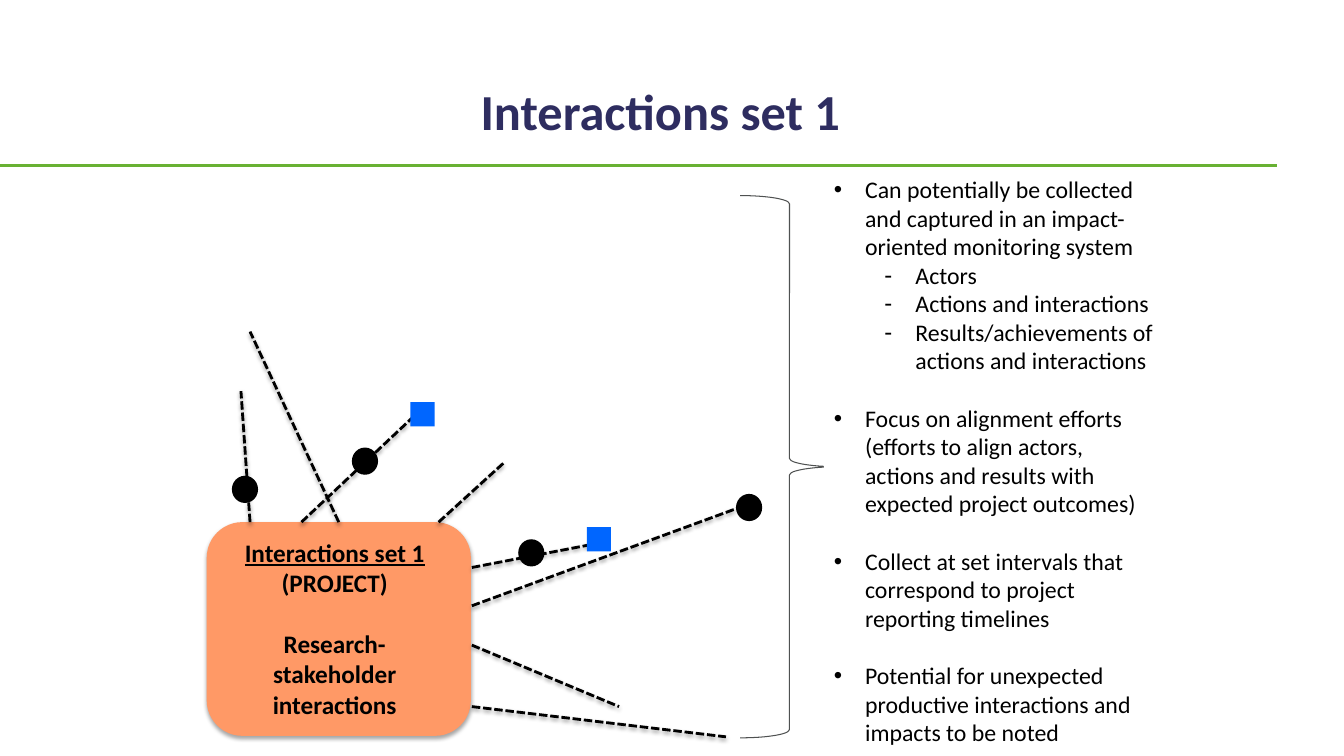
import pptx
import pptx.util
import pptx.dml.color
import pptx.enum.dml
import pptx.enum.shapes
import pptx.enum.text
import pptx.oxml.ns
import lxml.etree

Pt = pptx.util.Pt
Kind = pptx.enum.shapes.MSO_SHAPE
Straight = pptx.enum.shapes.MSO_CONNECTOR.STRAIGHT
Align = pptx.enum.text.PP_ALIGN
Anchor = pptx.enum.text.MSO_ANCHOR
Auto = pptx.enum.text.MSO_AUTO_SIZE
qn = pptx.oxml.ns.qn
hue = pptx.dml.color.RGBColor.from_string

deck = pptx.Presentation()
deck.slide_width = pptx.util.Inches(13.33)
deck.slide_height = pptx.util.Inches(7.5)
cell = deck.slide_height / 75
slide = deck.slides.add_slide(deck.slide_layouts[1])


def grid(*units):
    return [round(unit * cell) for unit in units]


def shade(shape, alpha=0, blur=0, drop=0):
    props = shape.element.spPr
    for old in props.findall(qn("a:effectLst")):
        props.remove(old)
    effects = lxml.etree.SubElement(props, qn("a:effectLst"))
    if alpha:
        outer = lxml.etree.SubElement(
            effects, qn("a:outerShdw"), blurRad=str(Pt(blur)), dist=str(Pt(drop)),
            dir="5400000", rotWithShape="0")
        tint = lxml.etree.SubElement(outer, qn("a:srgbClr"), val="000000")
        lxml.etree.SubElement(tint, qn("a:alpha"), val=str(alpha * 1000))


rule = slide.shapes.add_connector(Straight, *grid(0, 16.4, 126.7, 16.4))
rule.line.color.rgb = hue("68B133")
rule.line.width = Pt(2)
shade(rule)

title = slide.shapes.title
title.left, title.top, title.width, title.height = grid(20.5, 1.9, 90, 12.5)
title.text_frame.text = "Interactions set 1"
title.text_frame.vertical_anchor = Anchor.BOTTOM
head = title.text_frame.paragraphs[0]
head.alignment = Align.CENTER
head.font.name = "Calibri"
head.font.size = Pt(36)
head.font.bold = True
head.font.color.rgb = hue("2E2D60")

box = slide.shapes.add_shape(Kind.ROUNDED_RECTANGLE, *grid(20.5, 51.8, 26.2, 21.2))
box.fill.solid()
box.fill.fore_color.rgb = hue("FF9966")
box.line.fill.background()
shade(box, 35, 3.1, 1.8)

label = slide.shapes.add_textbox(*grid(21.2, 52.8, 24, 19.2)).text_frame
label.word_wrap = True
label.text = "Interactions set 1\n(PROJECT)\nResearch-stakeholder interactions"
for row, para in enumerate(label.paragraphs):
    para.alignment = Align.CENTER
    para.space_before = Pt(22 if row == 2 else 0)
    para.font.name = "Calibri"
    para.font.size = Pt(18)
    para.font.bold = True
    para.font.underline = row == 0
    para.font.color.rgb = hue("000000")

rays = [
    (29.9, 51.8, 41.9, 40.5), (33.6, 51.8, 24.8, 32.9),
    (46.8, 56.3, 59.3, 53.9), (46.8, 64, 61.4, 70.1),
    (46.8, 60.1, 75.1, 49.7), (43.5, 51.8, 50.1, 45.8),
    (46.8, 70.1, 72, 73.1), (24.8, 51.8, 23.9, 38.8),
]
for ray in rays:
    link = slide.shapes.add_connector(Straight, *grid(*ray))
    if ray[0] == 33.6:
        link.begin_connect(box, 0)
    link.line.color.rgb = hue("000000")
    link.line.width = Pt(2)
    link.line.dash_style = pptx.enum.dml.MSO_LINE.SQUARE_DOT
    shade(link, 38, 3.1, 1.6)

marks = [
    (Kind.OVAL, "000000", 2.6, 2.7, [(23, 47.2), (73, 49), (51.4, 53.5), (34.9, 44.4)]),
    (Kind.RECTANGLE, "0066FF", 2.4, 2.4, [(40.7, 39.9), (58.2, 52.3)]),
]
for kind, tone, wide, high, spots in marks:
    for left, top in spots:
        mark = slide.shapes.add_shape(kind, *grid(left, top, wide, high))
        mark.fill.solid()
        mark.fill.fore_color.rgb = hue(tone)
        mark.line.fill.background()
        mark.shadow.inherit = False

brace = slide.shapes.add_shape(Kind.RIGHT_BRACE, *grid(73.4, 19.4, 9.8, 53.8))
brace.fill.background()
brace.line.color.rgb = hue("4F5151")
brace.line.width = Pt(0.75)
brace.shadow.inherit = False

body = slide.placeholders[1]
body.left, body.top, body.width, body.height = grid(81.7, 16.6, 34, 58.2)
body.fill.solid()
body.fill.fore_color.rgb = hue("FFFFFF")
body.element.getparent().append(body.element)
frame = body.text_frame
frame.auto_size = Auto.NONE
frame.vertical_anchor = Anchor.MIDDLE
points = [
    (0, "Can potentially be collected and captured in an impact-oriented monitoring system"),
    (1, "Actors"),
    (1, "Actions and interactions"),
    (1, "Results/achievements of actions and interactions"),
    (0, "Focus on alignment efforts (efforts to align actors, actions and results with expected project outcomes)"),
    (0, "Collect at set intervals that correspond to project reporting timelines"),
    (0, "Potential for unexpected productive interactions and impacts to be noted"),
]
frame.text = "\n".join(text for level, text in points)
for row, (para, (level, text)) in enumerate(zip(frame.paragraphs, points)):
    para.level = level
    para.space_before = Pt(20.5 if row and not level else 0)
    props = para._p.get_or_add_pPr()
    props.set("marL", str(grid(3.1 + 5 * level)[0]))
    props.set("indent", str(grid(-3.1)[0]))
    lxml.etree.SubElement(props, qn("a:buFont"), typeface="Arial")
    lxml.etree.SubElement(props, qn("a:buChar"), char="•-"[level])
    para.font.name = "Calibri"
    para.font.size = Pt(17)
    para.font.color.rgb = hue("000000")

deck.save("out.pptx")
